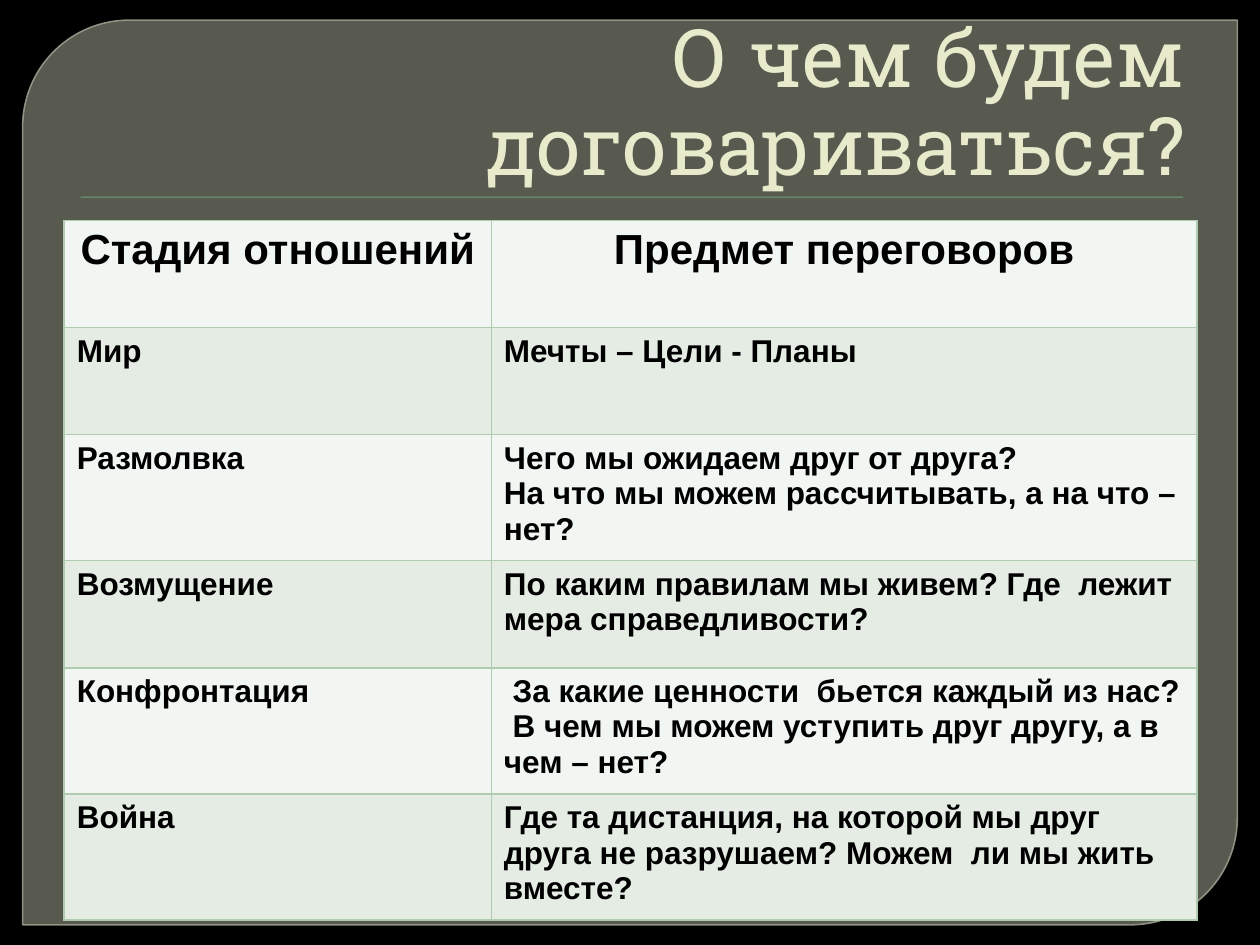
from lxml.etree import SubElement
from pptx import Presentation
from pptx.dml.color import RGBColor
from pptx.enum.shapes import MSO_SHAPE
from pptx.enum.text import MSO_ANCHOR, PP_ALIGN
from pptx.oxml.ns import qn
from pptx.util import Inches, Pt

BLACK = RGBColor(0x00, 0x00, 0x00)
PANEL = RGBColor(0x88, 0x8B, 0x7B)
PANEL_EDGE = RGBColor(0x9D, 0xA0, 0x90)
RULE = RGBColor(0x72, 0xA3, 0x76)
TITLE = RGBColor(0xE7, 0xEA, 0xCB)
GRID = RGBColor(0xB0, 0xCC, 0xB0)
BANDS = (RGBColor(0xF2, 0xF6, 0xF2), RGBColor(0xE4, 0xEC, 0xE4))

COLUMN_WIDTHS = (3.39, 5.6)
ROW_HEIGHT = 0.85
STAGES = (
    ("Стадия отношений", "Предмет переговоров"),
    ("Мир", "Мечты – Цели - Планы"),
    ("Размолвка", "Чего мы ожидаем друг от друга?\n"
                  "На что мы можем рассчитывать, а на что – нет?"),
    ("Возмущение", "По каким правилам мы живем? Где  лежит мера справедливости?"),
    ("Конфронтация", " За какие ценности  бьется каждый из нас?  "
                     "В чем мы можем уступить друг другу, а в чем – нет?"),
    ("Война", "Где та дистанция, на которой мы друг друга не разрушаем? "
              "Можем  ли мы жить вместе?"),
)


def set_opacity(color_format_parent, percent):
    color = color_format_parent.find(".//" + qn("a:srgbClr"))
    SubElement(color, qn("a:alpha"), val=str(percent * 1000))


def style_text(frame, font_name, size, color, align, bold=False):
    for paragraph in frame.paragraphs:
        paragraph.alignment = align
        for run in paragraph.runs:
            run.font.name = font_name
            run.font.size = Pt(size)
            run.font.bold = bold
            run.font.color.rgb = color


def add_panel(slide):
    panel = slide.shapes.add_shape(
        MSO_SHAPE.ROUND_2_DIAG_RECTANGLE,
        Inches(0.18), Inches(0.16), Inches(9.64), Inches(7.18))
    panel.adjustments[0] = 0.118
    panel.adjustments[1] = 0
    panel.shadow.inherit = False
    panel.fill.solid()
    panel.fill.fore_color.rgb = PANEL
    panel.line.color.rgb = PANEL_EDGE
    panel.line.width = Pt(0.87)
    properties = panel.fill._xPr
    set_opacity(properties.find(qn("a:solidFill")), 65)
    set_opacity(properties.find(qn("a:ln")), 88)


def add_rule(slide):
    rule = slide.shapes.add_shape(
        MSO_SHAPE.RECTANGLE,
        Inches(0.64), Inches(1.56), Inches(8.75), Inches(0.01))
    rule.shadow.inherit = False
    rule.fill.solid()
    rule.fill.fore_color.rgb = RULE
    rule.line.fill.background()


def add_title(slide, wording):
    title = slide.shapes.add_textbox(
        Inches(0.5), Inches(0.28), Inches(9), Inches(1.25))
    frame = title.text_frame
    frame.word_wrap = True
    frame.vertical_anchor = MSO_ANCHOR.BOTTOM
    frame.margin_top = frame.margin_bottom = 0
    frame.text = wording
    frame.paragraphs[0].line_spacing = 0.91
    style_text(frame, "Roboto Slab", 46, TITLE, PP_ALIGN.RIGHT)


def add_borders(cell):
    """Outline a cell; border elements must come before its fill."""
    properties = cell._tc.get_or_add_tcPr()
    for position, side in enumerate(("a:lnL", "a:lnR", "a:lnT", "a:lnB")):
        border = SubElement(properties, qn(side), w=str(Pt(1)))
        fill = SubElement(border, qn("a:solidFill"))
        SubElement(fill, qn("a:srgbClr"), val=str(GRID))
        properties.insert(position, border)


def add_stage_table(slide):
    table = slide.shapes.add_table(
        len(STAGES), len(COLUMN_WIDTHS), Inches(0.51), Inches(1.75),
        Inches(sum(COLUMN_WIDTHS)), Inches(ROW_HEIGHT * len(STAGES))).table
    for column, width in zip(table.columns, COLUMN_WIDTHS):
        column.width = Inches(width)
    for row_index, wordings in enumerate(STAGES):
        is_header = row_index == 0
        for column_index, wording in enumerate(wordings):
            cell = table.cell(row_index, column_index)
            cell.text_frame.text = wording
            style_text(cell.text_frame, "Arial", 24 if is_header else 18, BLACK,
                       PP_ALIGN.CENTER if is_header else PP_ALIGN.LEFT, bold=True)
            cell.fill.solid()
            cell.fill.fore_color.rgb = BANDS[row_index % 2]
            add_borders(cell)


def main():
    presentation = Presentation()
    presentation.slide_width = Inches(10)
    presentation.slide_height = Inches(7.5)
    slide = presentation.slides.add_slide(presentation.slide_layouts[6])
    slide.background.fill.solid()
    slide.background.fill.fore_color.rgb = BLACK
    add_panel(slide)
    add_rule(slide)
    add_title(slide, "О чем будем договариваться?")
    add_stage_table(slide)
    presentation.save("out.pptx")


if __name__ == "__main__":
    main()
